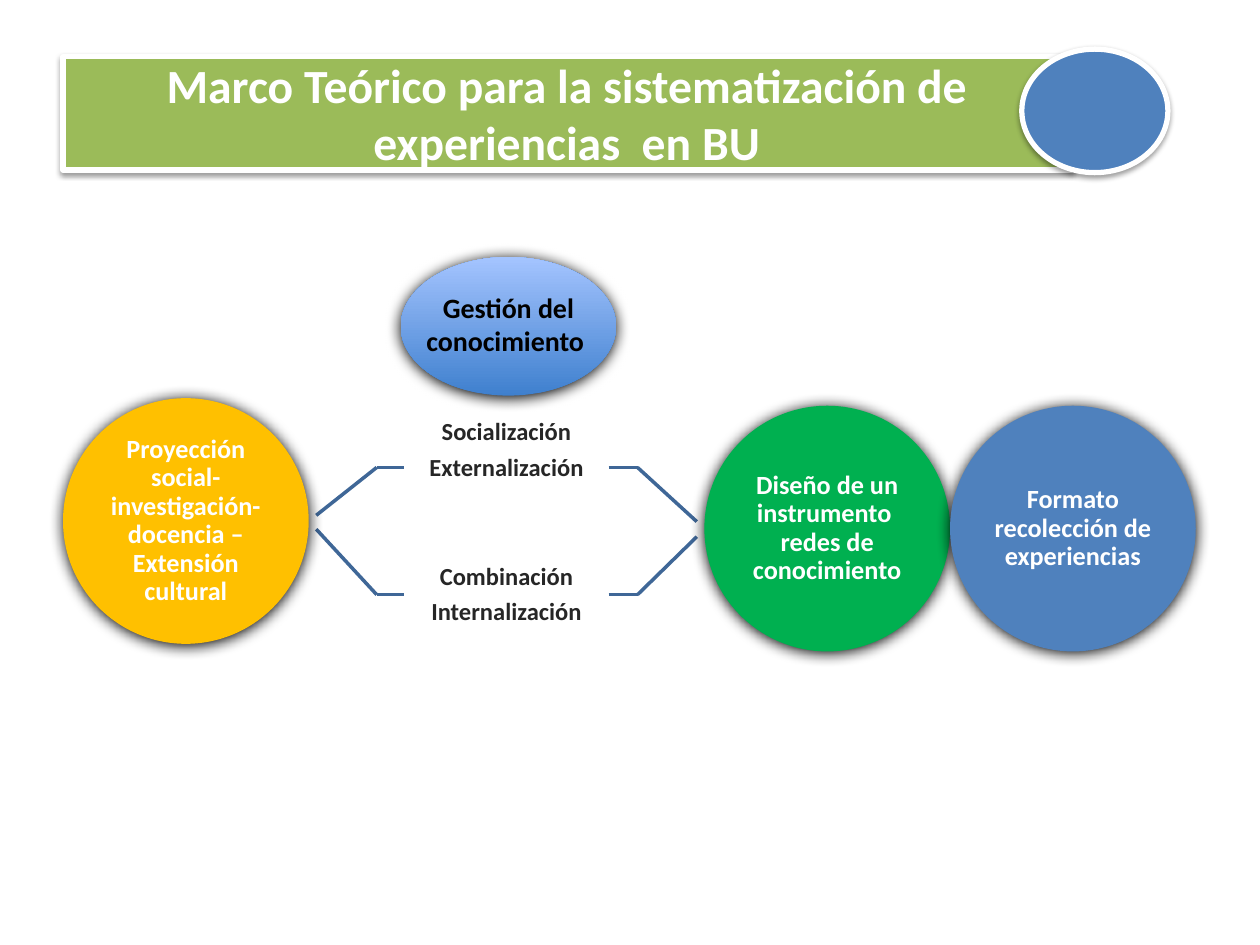
from lxml import etree
from pptx import Presentation
from pptx.dml.color import RGBColor
from pptx.enum.shapes import MSO_CONNECTOR as CONN, MSO_SHAPE as SHAPE
from pptx.enum.text import MSO_ANCHOR as ANCHOR, PP_ALIGN as ALIGN
from pptx.oxml.ns import qn
from pptx.util import Inches, Pt

TITLE = "Marco Teórico para la sistematización de experiencias  en BU"
TOPIC = "Gestión del conocimiento "
CIRCLE_SIZE = 1.95
CIRCLES = [
    (0.5, 3.16, "FFC000", "Proyección social-investigación-docencia –Extensión cultural"),
    (5.59, 3.22, "00B050", "Diseño de un instrumento  redes de conocimiento"),
    (7.54, 3.22, "4F81BD", "Formato recolección de experiencias"),
]
BRANCHES = [
    (3.71, 4.09, 4.14, 3.19, 1.05, 0.39, ["Socialización", "Externalización"]),
    (4.72, 4.2, 4.26, 4.24, 0.97, 0.11, ["Combinación", "Internalización"]),
]
BRANCH_X = [2.51, 2.99, 3.21, 4.83, 5.06, 5.53]
SOFT = {"alpha": 100, "blur": 8.5, "dist": 1}
CRISP = {"alpha": 38, "blur": 3.1, "dist": 1.6}
SPACED = {"line_spacing": 0.9, "space_after": Pt(5)}


def color(value):
    return RGBColor.from_string(value)


def add_shadow(sp, alpha, blur, dist):
    sp.shadow.inherit = False
    effects = sp._element.spPr.find(qn("a:effectLst"))
    outer = etree.SubElement(effects, qn("a:outerShdw"), blurRad=str(Pt(blur)),
                             dist=str(Pt(dist)), dir="5400000", algn="ctr", rotWithShape="0")
    clr = etree.SubElement(outer, qn("a:srgbClr"), val="000000")
    etree.SubElement(clr, qn("a:alpha"), val=str(alpha * 1000))


def add_block(s, kind, box, fill, shadow, line=None):
    sp = s.shapes.add_shape(kind, *map(Inches, box))
    if fill:
        sp.fill.solid()
        sp.fill.fore_color.rgb = color(fill)
    if line:
        sp.line.color.rgb = color(line)
        sp.line.width = Pt(3)
    else:
        sp.line.fill.background()
    add_shadow(sp, **shadow)
    return sp


def write(sp, lines, size, font_color, insets=(0.1, 0.05, 0.1, 0.05), spacing=None):
    tf = sp.text_frame
    tf.word_wrap = True
    tf.vertical_anchor = ANCHOR.MIDDLE
    for side, inset in zip(("left", "top", "right", "bottom"), insets):
        setattr(tf, f"margin_{side}", Inches(inset))
    for i, text in enumerate(lines):
        p = tf.add_paragraph() if i else tf.paragraphs[0]
        for name, value in {"alignment": ALIGN.CENTER, **(spacing or {})}.items():
            setattr(p, name, value)
        r = p.add_run()
        r.text = text
        for name, value in {"name": "Calibri", "size": Pt(size), "bold": True}.items():
            setattr(r.font, name, value)
        r.font.color.rgb = color(font_color)


def add_line(s, start, end):
    c = s.shapes.add_connector(CONN.STRAIGHT, *map(Inches, start + end))
    c.line.color.rgb = color("3F6797")
    c.line.width = Pt(2)
    etree.SubElement(c._element.spPr, qn("a:effectLst"))


def add_branch(s, y, left_y, right_y, top, height, bottom_inset, lines):
    points = list(zip(BRANCH_X, (left_y, y, y, y, y, right_y)))
    for side in (points[:3], points[3:]):
        for start, end in zip(side, side[1:]):
            add_line(s, start, end)
    left, right = BRANCH_X[2:4]
    tb = s.shapes.add_textbox(*map(Inches, (left, top, right - left, height)))
    write(tb, lines, 14, "262626", (0.11, 0.11, 0.11, bottom_inset), SPACED)


def main():
    prs = Presentation()
    prs.slide_width, prs.slide_height = Inches(10), Inches(7.5)
    s = prs.slides.add_slide(prs.slide_layouts[6])

    for branch in BRANCHES:
        add_branch(s, *branch)
    for x, y, fill, text in CIRCLES:
        sp = add_block(s, SHAPE.OVAL, (x, y, CIRCLE_SIZE, CIRCLE_SIZE), fill, SOFT)
        write(sp, [text], 15, "FFFFFF", (0, 0, 0, 0), SPACED)

    topic = add_block(s, SHAPE.OVAL, (3.18, 2.04, 1.71, 1.1), None, SOFT)
    topic.fill.gradient()
    topic.fill.gradient_angle = 90
    for stop, (position, value) in zip(topic.fill.gradient_stops, [(0, "3F80CE"), (1, "A4C4FF")]):
        stop.position = position
        stop.color.rgb = color(value)
    tb = s.shapes.add_textbox(*map(Inches, (3.26, 2.25, 1.55, 0.64)))
    write(tb, [TOPIC], 16, "000000")

    banner = add_block(s, SHAPE.RECTANGLE, (0.5, 0.45, 8, 0.9), "9BBB59", CRISP, "FFFFFF")
    write(banner, [TITLE], 27.2, "FFFFFF")
    add_block(s, SHAPE.OVAL, (8.11, 0.39, 1.16, 0.98), "4F81BD", CRISP, "FFFFFF")
    prs.save("out.pptx")


if __name__ == "__main__":
    main()
